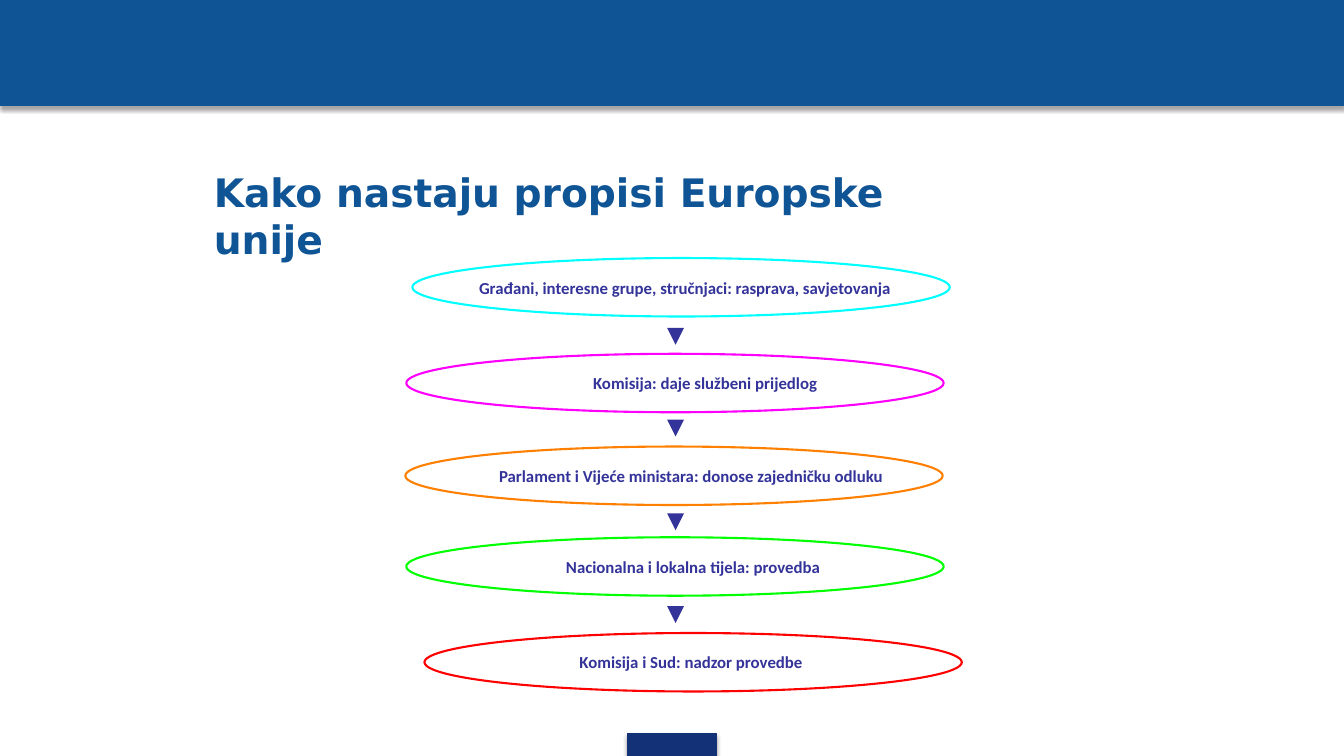
"""Build a slide showing how European Union regulations come about."""
from lxml.etree import SubElement
from pptx import Presentation
from pptx.dml.color import RGBColor
from pptx.enum.shapes import MSO_CONNECTOR, MSO_SHAPE
from pptx.enum.text import MSO_ANCHOR, MSO_AUTO_SIZE, PP_ALIGN
from pptx.oxml.ns import qn
from pptx.util import Inches, Pt

TITLE = "Kako nastaju propisi Europske unije"
BLUE, NAVY, INDIGO, WHITE = "0F5494", "133176", "333399", "FFFFFF"
BARS = [(0, 0, 13.33, 1.05, BLUE), (6.22, 7.28, 0.89, 0.22, NAVY)]
STAGES = [
    ("Građani, interesne grupe, stručnjaci: rasprava, savjetovanja", "00FFFF", 4.09, 2.56, 4.17),
    ("Komisija: daje službeni prijedlog", "FF00FF", 4.03, 3.51, 4.37),
    ("Parlament i Vijeće ministara: donose zajedničku odluku", "FF8000", 4.02, 4.43, 4.23),
    ("Nacionalna i lokalna tijela: provedba", "00FF00", 4.03, 5.33, 4.25),
    ("Komisija i Sud: nadzor provedbe", "FF0000", 4.21, 6.28, 4.23),
]
OVAL_WIDTH, OVAL_HEIGHT = 5.33, 0.58
LABEL_WIDTH, LABEL_HEIGHT = 5.25, 0.42
ARROW_X, ARROW_LENGTH = 6.7, 0.08
ARROW_TOPS = [3.34, 4.25, 5.18, 6.1]


def color(value):
    return RGBColor.from_string(value)


def add_outlined(slide, preset, box, fill, line, width):
    shape = slide.shapes.add_shape(preset, *map(Inches, box))
    shape.shadow.inherit = False
    shape.fill.solid()
    shape.fill.fore_color.rgb = color(fill)
    shape.line.color.rgb = color(line)
    shape.line.width = Pt(width)
    return shape


def add_bar(slide, left, top, width, height, fill):
    bar = add_outlined(slide, MSO_SHAPE.RECTANGLE, (left, top, width, height), fill, fill, 0.75)
    effects = bar._element.spPr.find(qn("a:effectLst"))
    shadow = SubElement(effects, qn("a:outerShdw"), blurRad=str(Pt(3.1)),
                        dist=str(Pt(1.8)), dir="5400000", rotWithShape="0")
    black = SubElement(shadow, qn("a:srgbClr"), val="000000")
    SubElement(black, qn("a:alpha"), val="35000")


def write(shape, text, name, size, ink, align, anchor):
    frame = shape.text_frame
    frame.word_wrap = True
    frame.auto_size = MSO_AUTO_SIZE.NONE
    frame.vertical_anchor = anchor
    frame.text = text
    paragraph = frame.paragraphs[0]
    paragraph.alignment = align
    font = paragraph.runs[0].font
    font.name, font.size, font.bold = name, Pt(size), True
    font.color.rgb = color(ink)


def add_stage(slide, text, outline, left, top, label_left):
    add_outlined(slide, MSO_SHAPE.OVAL, (left, top, OVAL_WIDTH, OVAL_HEIGHT), WHITE, outline, 1.5)
    label_top = top + (OVAL_HEIGHT - LABEL_HEIGHT) / 2
    label = slide.shapes.add_textbox(
        *map(Inches, (label_left, label_top, LABEL_WIDTH, LABEL_HEIGHT)))
    write(label, text, "Calibri", 12, INDIGO, PP_ALIGN.CENTER, MSO_ANCHOR.MIDDLE)


def add_arrow(slide, top):
    ends = (ARROW_X, top, ARROW_X, top + ARROW_LENGTH)
    arrow = slide.shapes.add_connector(MSO_CONNECTOR.STRAIGHT, *map(Inches, ends))
    arrow.line.color.rgb = color(INDIGO)
    arrow.line.width = Pt(4)
    SubElement(arrow.line._get_or_add_ln(), qn("a:tailEnd"), type="triangle")
    SubElement(arrow._element.spPr, qn("a:effectLst"))


def main():
    deck = Presentation()
    deck.slide_width, deck.slide_height = Inches(13.33), Inches(7.5)
    slide = deck.slides.add_slide(deck.slide_layouts[5])
    for bar in BARS:
        add_bar(slide, *bar)
    title = slide.shapes.title
    title.left, title.top, title.width, title.height = map(Inches, (2.02, 1.62, 8.03, 0.57))
    write(title, TITLE, "DejaVu Sans", 28, BLUE, PP_ALIGN.LEFT, MSO_ANCHOR.TOP)
    for stage in STAGES:
        add_stage(slide, *stage)
    for top in ARROW_TOPS:
        add_arrow(slide, top)
    deck.save("out.pptx")


if __name__ == "__main__":
    main()
